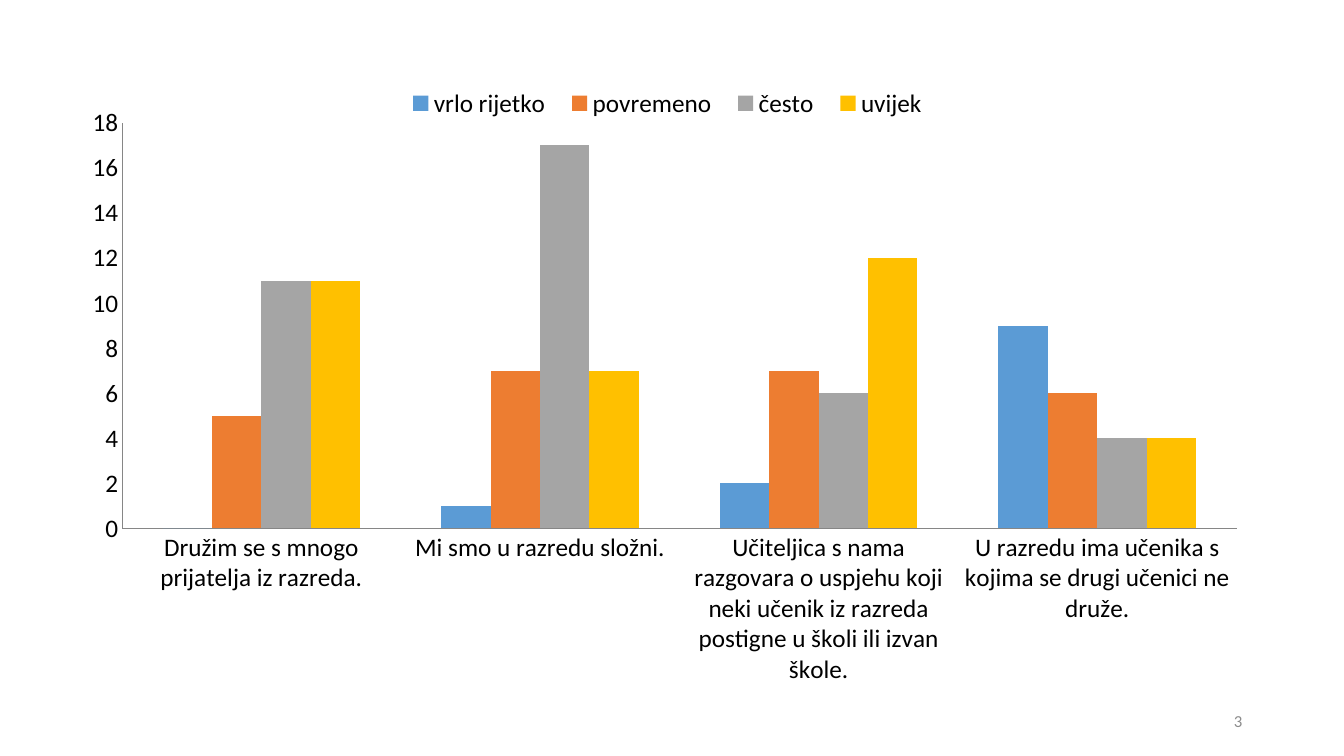
from dataclasses import dataclass

from lxml import etree
from pptx import Presentation
from pptx import util as u
from pptx.chart.data import CategoryChartData
from pptx.dml.color import RGBColor
from pptx.enum import chart as ch, text
from pptx.oxml.ns import qn


@dataclass(frozen=True)
class Theme:
    """Colours, type sizes and font of the slide."""
    font: str = "Calibri"
    ink: str = "000000"
    muted: str = "8C8C8C"
    axis: str = "868686"
    series: tuple = ("5B9BD5", "ED7D31", "A5A5A5", "FFC000")
    chart_size: int = 18
    number_size: int = 12


THEME = Theme()

STATEMENTS = (
    "Družim se s mnogo prijatelja iz razreda.",
    "Mi smo u razredu složni.",
    "Učiteljica s nama razgovara o uspjehu koji neki učenik iz razreda "
    "postigne u školi ili izvan škole.",
    "U razredu ima učenika s kojima se drugi učenici ne druže.",
)
ANSWERS = {
    "vrlo rijetko": (0, 1, 2, 9),
    "povremeno": (5, 7, 7, 6),
    "često": (11, 17, 6, 4),
    "uvijek": (11, 7, 12, 4),
}


def set_font(font, size, color):
    """Apply the theme font with a size and colour."""
    font.name = THEME.font
    font.size = u.Pt(size)
    font.color.rgb = RGBColor.from_string(color)


def set_layout(parent, index, box, inner=False):
    """Place a chart part by fractions of the chart: left, top, width, height."""
    for old in parent.findall(qn("c:layout")):
        parent.remove(old)
    layout = etree.Element(qn("c:layout"))
    manual = etree.SubElement(layout, qn("c:manualLayout"))
    settings = [("layoutTarget", "inner")] if inner else []
    settings += [("xMode", "edge"), ("yMode", "edge")]
    settings += zip("xywh", map(str, box))
    for tag, value in settings:
        etree.SubElement(manual, qn(f"c:{tag}")).set("val", value)
    parent.insert(index, layout)


def style_axis(axis):
    """Give an axis a thin line without ticks or gridlines."""
    axis.has_major_gridlines = False
    axis.major_tick_mark = axis.minor_tick_mark = ch.XL_TICK_MARK.NONE
    axis.format.line.color.rgb = RGBColor.from_string(THEME.axis)
    axis.format.line.width = u.Pt(0.75)
    set_font(axis.tick_labels.font, THEME.chart_size, THEME.ink)


def add_answer_chart(s, left, top, width, height):
    """Add the clustered columns of answers to each statement."""
    data = CategoryChartData()
    data.categories = STATEMENTS
    for name, values in ANSWERS.items():
        data.add_series(name, values)
    chart = s.shapes.add_chart(
        ch.XL_CHART_TYPE.COLUMN_CLUSTERED, u.Inches(left), u.Inches(top),
        u.Inches(width), u.Inches(height), data).chart
    chart.has_title = False
    set_font(chart.font, THEME.chart_size, THEME.ink)

    plot = chart.plots[0]
    plot.gap_width, plot.overlap, plot.vary_by_categories = 164, 0, False
    for series, color in zip(plot.series, THEME.series):
        series.format.fill.solid()
        series.format.fill.fore_color.rgb = RGBColor.from_string(color)

    style_axis(chart.category_axis)
    values = chart.value_axis
    style_axis(values)
    values.minimum_scale, values.maximum_scale, values.major_unit = 0, 18, 2

    chart.has_legend = True
    chart.legend.position = ch.XL_LEGEND_POSITION.TOP
    chart.legend.include_in_layout = False
    set_font(chart.legend.font, THEME.chart_size, THEME.ink)
    root = chart.element
    set_layout(root.find(".//" + qn("c:plotArea")), 0,
               (0.04, 0.12, 0.94, 0.62), inner=True)
    set_layout(root.find(".//" + qn("c:legend")), 1, (0.27, 0.06, 0.46, 0.06))


def add_slide_number(s, number, left, top, width, height):
    """Add the right-aligned slide number."""
    tf = s.shapes.add_textbox(u.Inches(left), u.Inches(top),
                              u.Inches(width), u.Inches(height)).text_frame
    tf.word_wrap = True
    tf.vertical_anchor = text.MSO_ANCHOR.MIDDLE
    p = tf.paragraphs[0]
    p.alignment = text.PP_ALIGN.RIGHT
    r = p.add_run()
    r.text = number
    set_font(r.font, THEME.number_size, THEME.muted)


def main():
    """Build and save the slide."""
    prs = Presentation()
    prs.slide_width, prs.slide_height = u.Inches(13.33), u.Inches(7.5)
    s = prs.slides.add_slide(prs.slide_layouts[6])
    add_answer_chart(s, 0.74, 0.44, 11.76, 6.49)
    add_slide_number(s, "3", 9.42, 6.95, 3, 0.4)
    prs.save("out.pptx")


if __name__ == "__main__":
    main()
